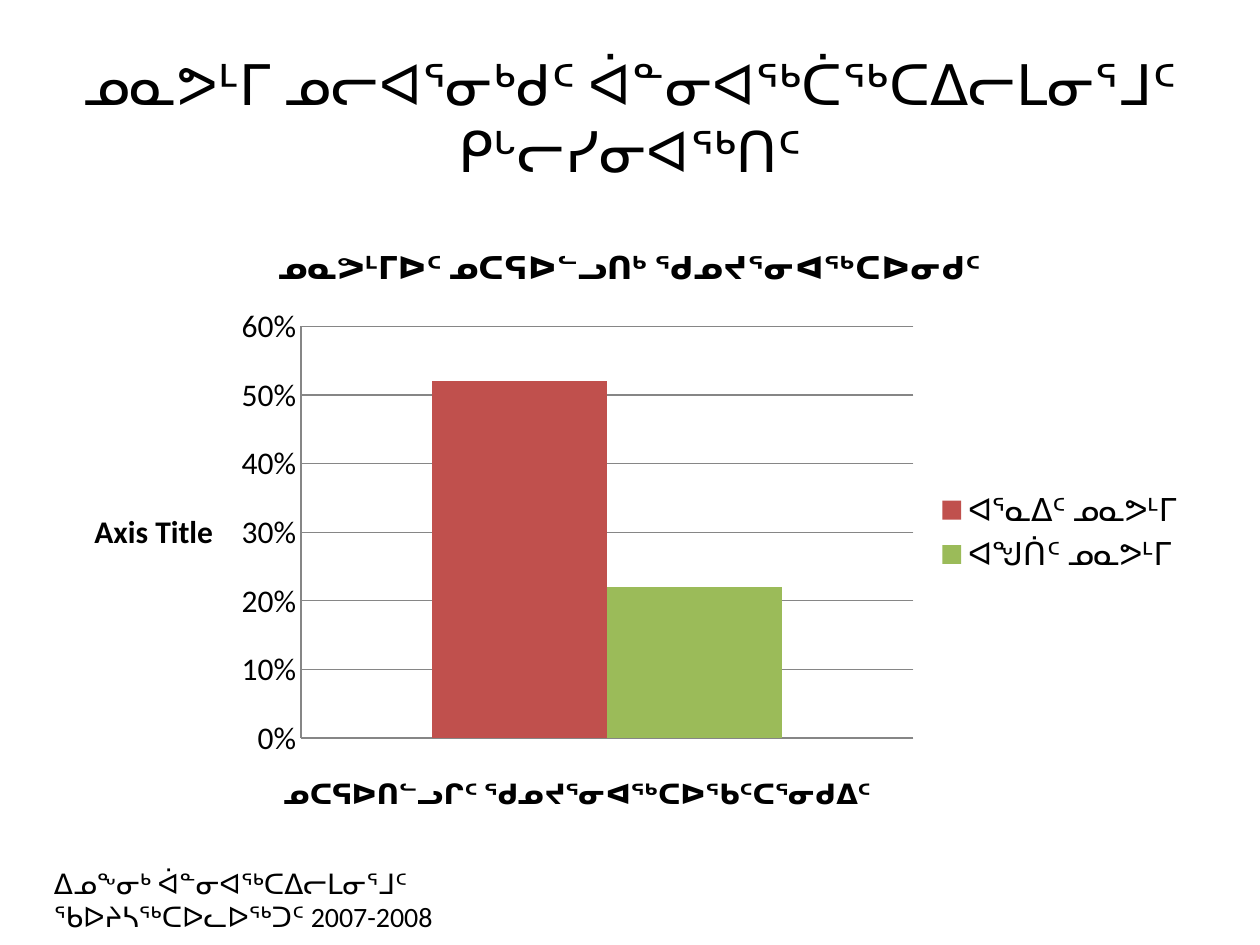
from dataclasses import dataclass

from lxml import etree
from pptx import Presentation
from pptx.chart.data import CategoryChartData
from pptx.dml.color import RGBColor
from pptx.enum.chart import XL_CHART_TYPE as ChartType, XL_LEGEND_POSITION as LegendPos
from pptx.enum.chart import XL_TICK_MARK as TickMark
from pptx.enum.text import MSO_ANCHOR as Anchor, PP_ALIGN as Align
from pptx.oxml.ns import qn
from pptx.util import Inches, Pt


@dataclass(frozen=True)
class Theme:
    font: str = "Calibri"
    ink: str = "000000"
    grid: str = "868686"
    women: str = "C0504D"
    men: str = "9BBB59"
    title: int = 32
    chart: int = 18
    note: int = 16


theme = Theme()


def rgb(value):
    return RGBColor.from_string(value)


def write(tf, text, size=theme.chart, bold=False, align=None):
    p = tf.paragraphs[0]
    p.alignment = align
    r = p.add_run()
    r.text = text
    r.font.name, r.font.size, r.font.bold = theme.font, Pt(size), bold
    r.font.color.rgb = rgb(theme.ink)


prs = Presentation()
prs.slide_width, prs.slide_height = Inches(10), Inches(7.5)
W, H = prs.slide_width, prs.slide_height
left, width = int(W * 0.05), int(W * 0.9)
s = prs.slides.add_slide(prs.slide_layouts[5])

# Title
sp = s.shapes.title
sp.left, sp.top, sp.width, sp.height = left, int(H * 0.04), width, Inches(1.25)
sp.text_frame.vertical_anchor = Anchor.MIDDLE
write(sp.text_frame, "ᓄᓇᕗᒻᒥ ᓄᓕᐊᕐᓂᒃᑯᑦ ᐋᓐᓂᐊᖅᑖᖅᑕᐃᓕᒪᓂᕐᒧᑦ ᑭᒡᓕᓯᓂᐊᖅᑎᑦ",
      size=theme.title, align=Align.CENTER)

# Chart
series = [("ᐊᕐᓇᐃᑦ ᓄᓇᕗᒻᒥ", 0.52, theme.women), ("ᐊᖑᑏᑦ ᓄᓇᕗᒻᒥ", 0.22, theme.men)]
data = CategoryChartData(number_format="0%")
data.categories = ["1"]
for name, value, _ in series:
    data.add_series(name, [value])
chart = s.shapes.add_chart(ChartType.COLUMN_CLUSTERED, left, Inches(1.75),
                           width, int(H * 0.66), data).chart
chart.font.name, chart.font.size = theme.font, Pt(theme.chart)
chart.font.color.rgb = rgb(theme.ink)
chart.has_title = True
chart.chart_title.include_in_layout = False
write(chart.chart_title.text_frame, "ᓄᓇᕗᒻᒥᐅᑦ ᓄᑕᕋᐅᓪᓗᑎᒃ ᖁᓄᔪᕐᓂᐊᖅᑕᐅᓂᑯᑦ", bold=True)
chart.has_legend = True
chart.legend.position = LegendPos.RIGHT
chart.legend.include_in_layout = False

# Columns
plot = chart.plots[0]
plot.gap_width, plot.overlap, plot.vary_by_categories = 150, 0, False
for column, (_, _, color) in zip(plot.series, series):
    column.format.fill.solid()
    column.format.fill.fore_color.rgb = rgb(color)

# Axes
cat_axis, val_axis = chart.category_axis, chart.value_axis
cat_axis.visible = False
write(cat_axis.axis_title.text_frame, "ᓄᑕᕋᐅᑎᓪᓗᒋᑦ ᖁᓄᔪᕐᓂᐊᖅᑕᐅᖃᑦᑕᕐᓂᑯᐃᑦ",
      size=theme.note, bold=True)
val_axis.minimum_scale, val_axis.maximum_scale, val_axis.major_unit = 0, 0.6, 0.1
val_axis.major_tick_mark = TickMark.NONE
val_axis.tick_labels.number_format = "0%"
val_axis.tick_labels.number_format_is_linked = False
val_axis.has_major_gridlines = True
for line in (val_axis.format.line, val_axis.major_gridlines.format.line):
    line.color.rgb = rgb(theme.grid)
    line.width = Pt(0.75)
tf = val_axis.axis_title.text_frame
write(tf, "Axis Title", bold=True)
body = tf._txBody.find(qn("a:bodyPr"))
body.set("rot", "0")
body.set("vert", "horz")

# Plot area as shares of the chart
area = chart._chartSpace.find(".//" + qn("c:plotArea"))
for old in area.findall(qn("c:layout")):
    area.remove(old)
layout = etree.Element(qn("c:layout"))
manual = etree.SubElement(layout, qn("c:manualLayout"))
for tag, value in [("layoutTarget", "inner"), ("xMode", "edge"), ("yMode", "edge"),
                   ("x", 0.21), ("y", 0.17), ("w", 0.54), ("h", 0.66)]:
    etree.SubElement(manual, qn("c:" + tag)).set("val", str(value))
area.insert(0, layout)

# Source note
sp = s.shapes.add_textbox(Inches(0.33), int(H * 0.91), Inches(4.08), Inches(0.64))
sp.text_frame.word_wrap = True
write(sp.text_frame, "ᐃᓄᖕᓂᒃ ᐋᓐᓂᐊᖅᑕᐃᓕᒪᓂᕐᒧᑦ ᖃᐅᔨᓴᖅᑕᐅᓚᐅᖅᑐᑦ 2007-2008", size=theme.note)

prs.save("out.pptx")
